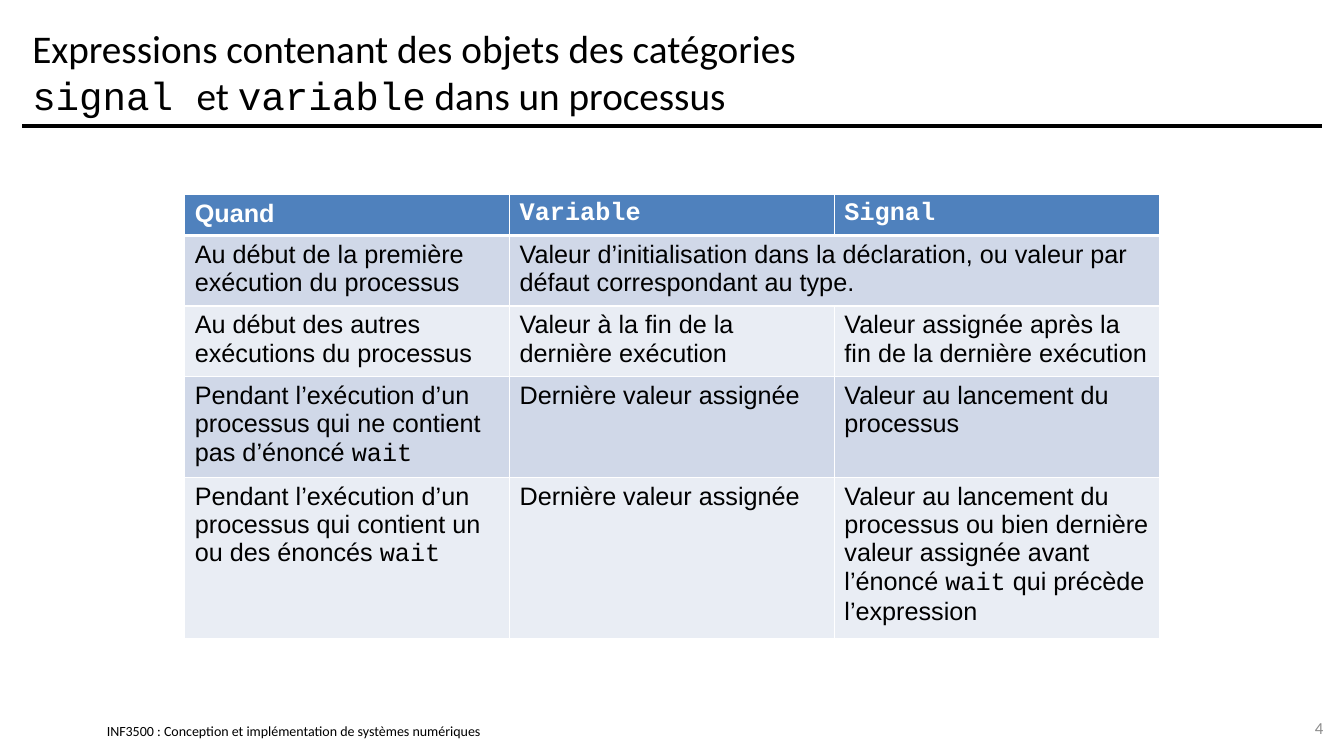
from lxml.etree import SubElement
from pptx import Presentation
from pptx.dml.color import RGBColor
from pptx.enum.shapes import MSO_CONNECTOR
from pptx.enum.text import MSO_ANCHOR, PP_ALIGN
from pptx.oxml.ns import qn
from pptx.util import Pt

COLORS = {
    "black": "000000",
    "white": "FFFFFF",
    "gray": "8C8C8C",
    "header": "4F81BD",
    "odd": "D0D8E8",
    "even": "E9EDF4",
}


def write(para, text, size=18, color="black", bold=False, font="Arial"):
    """Add text to a paragraph; parts between backticks are set in Courier New."""
    for index, part in enumerate(text.split("`")):
        if part:
            span = para.add_run()
            span.text = part
            span.font.name = "Courier New" if index % 2 else font
            span.font.size = Pt(size)
            span.font.bold = bold
            span.font.color.rgb = RGBColor.from_string(COLORS[color])


def add_box(left, top, width, height, margins=True):
    """Add an empty, vertically centred text box and return its first paragraph."""
    frame = page.shapes.add_textbox(Pt(left), Pt(top), Pt(width), Pt(height)).text_frame
    frame.word_wrap = True
    frame.vertical_anchor = MSO_ANCHOR.MIDDLE
    if not margins:
        frame.margin_left = frame.margin_right = frame.margin_top = frame.margin_bottom = 0
    return frame.paragraphs[0]


deck = Presentation()
deck.slide_width, deck.slide_height = Pt(960), Pt(540)
page = deck.slides.add_slide(deck.slide_layouts[6])

# Footer and rule
footer = add_box(76.3, 516, 368, 12.2, margins=False)
write(footer, "INF3500 : Conception et implémentation de systèmes numériques",
      size=10, font="Calibri")

rule = page.shapes.add_connector(MSO_CONNECTOR.STRAIGHT, Pt(16), Pt(90), Pt(944), Pt(90))
rule.line.width = Pt(3)
rule.line.color.rgb = RGBColor.from_string(COLORS["black"])
SubElement(rule._element.spPr, qn("a:effectLst"))

# Title
title = add_box(16, 12, 928, 78)
write(title, "Expressions contenant des objets des catégories", size=28, font="Calibri")
title.add_line_break()
write(title, "`signal `et `variable` dans un processus", size=28, font="Calibri")

# Table
rows = [
    ["Quand", "`Variable`", "`Signal`"],
    ["Au début de la première exécution du processus",
     "Valeur d’initialisation dans la déclaration, ou valeur par défaut "
     "correspondant au type.", ""],
    ["Au début des autres exécutions du processus",
     "Valeur à la fin de la dernière exécution",
     "Valeur assignée après la fin de la dernière exécution"],
    ["Pendant l’exécution d’un processus qui ne contient pas d’énoncé `wait`",
     "Dernière valeur assignée",
     "Valeur au lancement du processus"],
    ["Pendant l’exécution d’un processus qui contient un ou des énoncés `wait`",
     "Dernière valeur assignée",
     "Valeur au lancement du processus ou bien dernière valeur assignée avant "
     "l’énoncé `wait` qui précède l’expression"],
]
row_heights = [29.2, 47.4, 47.4, 69, 109]
column_width = 232

table = page.shapes.add_table(len(rows), 3, Pt(132), Pt(139), Pt(3 * column_width),
                              Pt(sum(row_heights))).table
for column in table.columns:
    column.width = Pt(column_width)
for row, height in zip(table.rows, row_heights):
    row.height = Pt(height)
table.cell(1, 1).merge(table.cell(1, 2))

for row_index, texts in enumerate(rows):
    is_header = row_index == 0
    fill = "header" if is_header else "odd" if row_index % 2 else "even"
    for column_index, text in enumerate(texts):
        cell = table.cell(row_index, column_index)
        write(cell.text_frame.paragraphs[0], text, bold=is_header,
              color="white" if is_header else "black")
        properties = cell._tc.get_or_add_tcPr()
        for side in ("lnL", "lnR", "lnT", "lnB"):
            thick = (row_index, side) in ((0, "lnB"), (1, "lnT"))
            border = SubElement(properties, qn(f"a:{side}"), w=str(Pt(3 if thick else 1)))
            paint = SubElement(border, qn("a:solidFill"))
            SubElement(paint, qn("a:srgbClr"), val=COLORS["white"])
        cell.fill.solid()
        cell.fill.fore_color.rgb = RGBColor.from_string(COLORS[fill])

# Page number
number = add_box(904.3, 505.4, 48, 28.8)
number.alignment = PP_ALIGN.RIGHT
write(number, "4", size=12, color="gray", font="Calibri")

deck.save("out.pptx")
